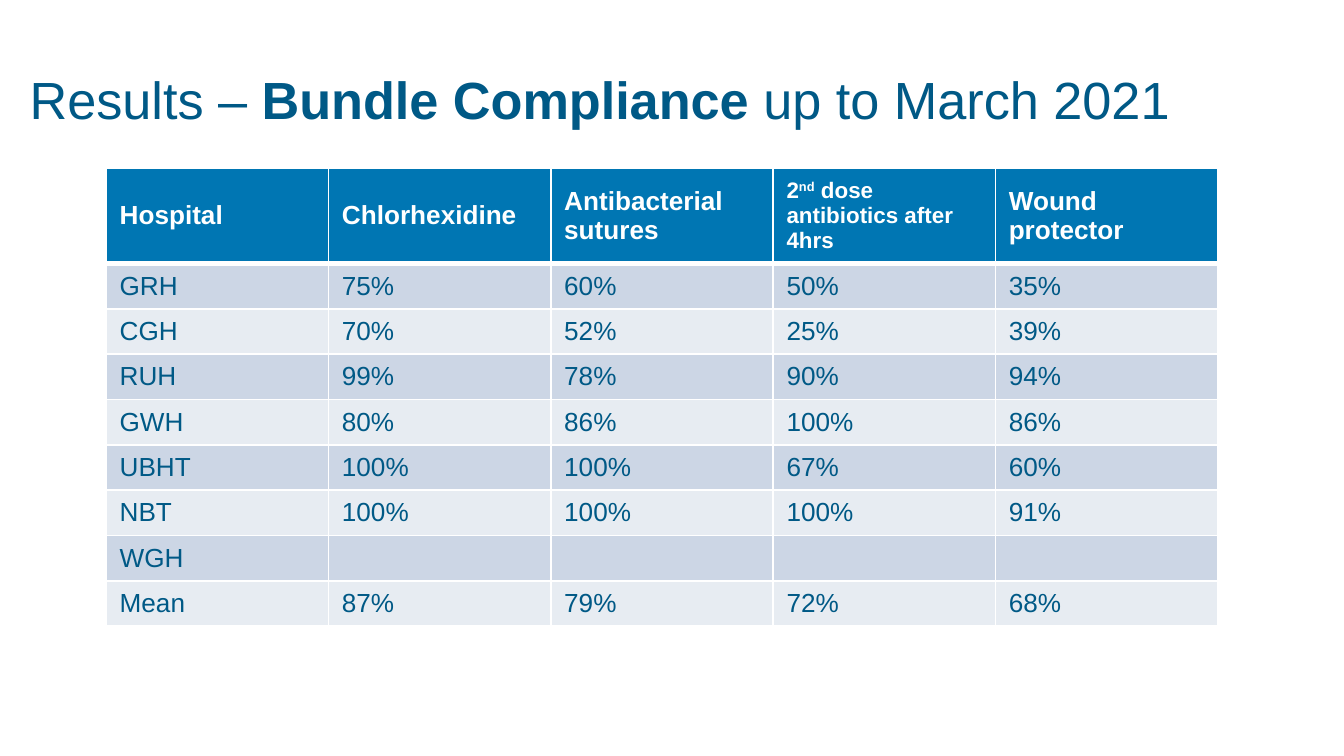
from dataclasses import dataclass

from lxml.etree import SubElement
from pptx import Presentation
from pptx.dml.color import RGBColor
from pptx.enum.text import MSO_ANCHOR, PP_ALIGN
from pptx.oxml.ns import qn
from pptx.util import Inches, Pt


@dataclass(frozen=True)
class Theme:
    """Colours, font and type sizes of the slide."""
    font: str = "Arial"
    ink: str = "005986"
    header: str = "0076B3"
    white: str = "FFFFFF"
    bands: tuple = ("CCD6E5", "E7ECF2")
    title_size: int = 28
    table_size: int = 14
    small_size: int = 12


THEME = Theme()

HEADINGS = [
    [("Hospital", {})],
    [("Chlorhexidine", {})],
    [("Antibacterial sutures", {})],
    [("2", {"size": THEME.small_size}),
     ("nd", {"size": THEME.small_size, "superscript": True}),
     (" dose antibiotics after 4hrs", {"size": THEME.small_size})],
    [("Wound protector", {})],
]
COMPLIANCE = [
    ("GRH", 75, 60, 50, 35),
    ("CGH", 70, 52, 25, 39),
    ("RUH", 99, 78, 90, 94),
    ("GWH", 80, 86, 100, 86),
    ("UBHT", 100, 100, 67, 60),
    ("NBT", 100, 100, 100, 91),
    ("WGH", None, None, None, None),
    ("Mean", 87, 79, 72, 68),
]


def add_text(paragraph, text, *, size, color, bold=False, superscript=False):
    """Append a formatted run, or size the paragraph when the text is empty."""
    if not text:
        SubElement(paragraph._p, qn("a:endParaRPr"), sz=str(size * 100))
        return
    run = paragraph.add_run()
    run.text = text
    run.font.name = THEME.font
    run.font.size = Pt(size)
    run.font.bold = bold
    run.font.color.rgb = RGBColor.from_string(color)
    if superscript:
        run._r.get_or_add_rPr().set("baseline", "30000")


class SlideBuilder:
    """Holds the theme and the current slide."""

    def __init__(self, slide, theme):
        """Keep the slide and its theme."""
        self.slide = slide
        self.theme = theme

    def title(self, parts, left, top, width, height):
        """Place the title from pairs of text and boldness."""
        title = self.slide.shapes.title
        title.left, title.top = Inches(left), Inches(top)
        title.width, title.height = Inches(width), Inches(height)
        frame = title.text_frame
        frame.word_wrap = True
        frame.vertical_anchor = MSO_ANCHOR.MIDDLE
        frame.margin_bottom = Inches(0.11)
        heading = frame.paragraphs[0]
        heading.alignment = PP_ALIGN.LEFT
        for text, bold in parts:
            add_text(heading, text, size=self.theme.title_size,
                     color=self.theme.ink, bold=bold)

    def borders(self, cell, top, bottom):
        """Draw white cell borders, with top and bottom widths in points."""
        properties = cell._tc.get_or_add_tcPr()
        for side, points in (("L", 1), ("R", 1), ("T", top), ("B", bottom)):
            line = SubElement(properties, qn(f"a:ln{side}"), w=str(Pt(points)))
            fill = SubElement(line, qn("a:solidFill"))
            SubElement(fill, qn("a:srgbClr"), val=self.theme.white)

    def cell(self, cell, parts, fill, color, bold=False, top=1, bottom=1):
        """Fill one table cell with runs of text."""
        self.borders(cell, top, bottom)
        cell.fill.solid()
        cell.fill.fore_color.rgb = RGBColor.from_string(fill)
        cell.vertical_anchor = MSO_ANCHOR.MIDDLE
        for text, changes in parts:
            style = {"size": self.theme.table_size, "color": color, "bold": bold}
            add_text(cell.text_frame.paragraphs[0], text, **(style | changes))

    def table(self, headings, records, left, top, width, height, header_height):
        """Add a table with a header row and banded records."""
        table = self.slide.shapes.add_table(
            len(records) + 1, len(headings), Inches(left), Inches(top),
            Inches(width), Inches(height)).table
        for column in table.columns:
            column.width = Inches(width / len(headings))
        for row in table.rows:
            row.height = Inches((height - header_height) / len(records))
        table.rows[0].height = Inches(header_height)
        for column, parts in enumerate(headings):
            self.cell(table.cell(0, column), parts, self.theme.header,
                      self.theme.white, bold=True, bottom=3)
        for row, (hospital, *rates) in enumerate(records, start=1):
            labels = [hospital] + ["" if rate is None else f"{rate}%" for rate in rates]
            for column, label in enumerate(labels):
                self.cell(table.cell(row, column), [(label, {})],
                          self.theme.bands[(row - 1) % 2], self.theme.ink,
                          top=3 if row == 1 else 1)


def main():
    """Build and save the compliance slide."""
    deck = Presentation()
    deck.slide_width, deck.slide_height = Inches(10), Inches(10 * 9 / 16)
    builder = SlideBuilder(deck.slides.add_slide(deck.slide_layouts[5]), THEME)
    builder.title([("Results – ", False), ("Bundle Compliance ", True),
                   ("up to March 2021", False)], 0.12, 0.45, 9.13, 0.63)
    builder.table(HEADINGS, COMPLIANCE, 0.79, 1.25, 8.27, 3.41, header_height=0.71)
    deck.save("out.pptx")


if __name__ == "__main__":
    main()
